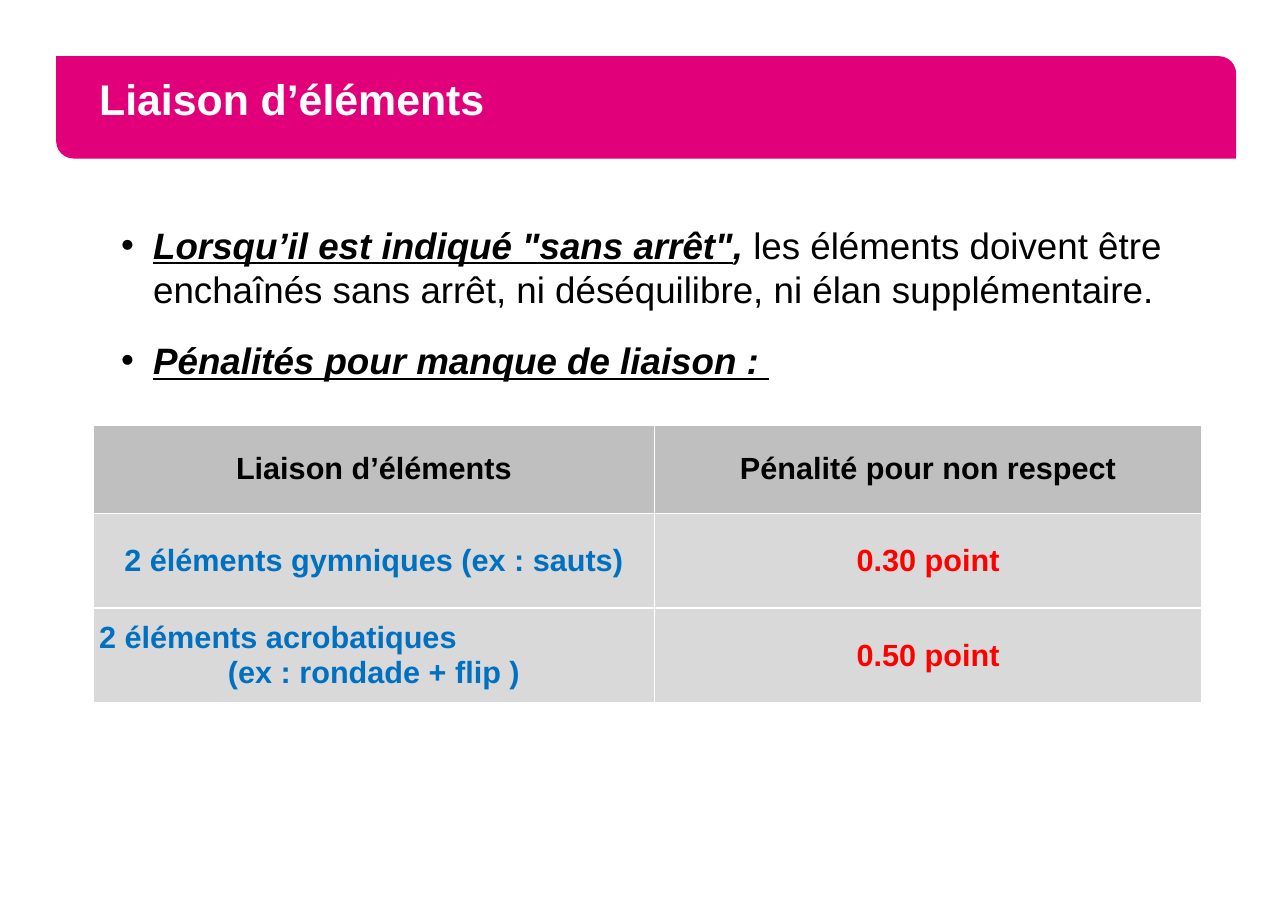
"""Build the slide on linked elements and their penalties."""
import lxml.etree
import pptx
import pptx.dml.color
import pptx.enum.shapes
import pptx.enum.text
import pptx.oxml.ns
import pptx.util

Inches = pptx.util.Inches
Pt = pptx.util.Pt
RGBColor = pptx.dml.color.RGBColor
Align = pptx.enum.text.PP_ALIGN
Anchor = pptx.enum.text.MSO_ANCHOR
AutoSize = pptx.enum.text.MSO_AUTO_SIZE
qn = pptx.oxml.ns.qn

WHITE = RGBColor(0xFF, 0xFF, 0xFF)
BLACK = RGBColor(0, 0, 0)
MAGENTA = RGBColor(0xE2, 0x00, 0x7A)
HEADER_GREY = RGBColor(0xBF, 0xBF, 0xBF)
ROW_GREY = RGBColor(0xD9, 0xD9, 0xD9)
BLUE = RGBColor(0x00, 0x70, 0xC0)
RED = RGBColor(0xFF, 0x00, 0x00)

STRONG = {"bold": True, "italic": True, "underline": True}
TITLE_BOX = (0.51, 0.51, 10.71, 0.93)
RULES = [
    (18, [("Lorsqu’il est indiqué \"sans arrêt\"", STRONG),
          (", ", {**STRONG, "underline": False}),
          ("les éléments doivent être enchaînés sans arrêt, "
           "ni déséquilibre, ni élan supplémentaire.", {})]),
    (6, [("Pénalités pour manque de liaison : ", STRONG)]),
]
CENTER, LEFT = Align.CENTER, Align.LEFT
PENALTIES = [
    ([("Liaison d’éléments", CENTER)], [("Pénalité pour non respect", CENTER)]),
    ([("2 éléments gymniques (ex : sauts)", CENTER)], [("0.30 point", CENTER)]),
    ([("2 éléments acrobatiques", LEFT), ("(ex : rondade + flip )", CENTER)],
     [("0.50 point", CENTER)]),
]


def apply(target, values):
    for name, value in values.items():
        setattr(target, name, value)


def place(shape, box):
    apply(shape, dict(zip(("left", "top", "width", "height"), map(Inches, box))))


class SlideBuilder:
    font_name = "Arial"
    hanging = Inches(0.29)

    def __init__(self, presentation):
        self.slide = presentation.slides.add_slide(presentation.slide_layouts[1])

    def add_run(self, paragraph, text, size, color, values):
        run = paragraph.add_run()
        run.text = text
        apply(run.font, {"name": self.font_name, "size": Pt(size), **values})
        run.font.color.rgb = color

    def banner(self, box):
        shape = self.slide.shapes.add_shape(
            pptx.enum.shapes.MSO_SHAPE.ROUND_2_DIAG_RECTANGLE, *map(Inches, box))
        shape.shadow.inherit = False
        shape.fill.solid()
        shape.fill.fore_color.rgb = MAGENTA
        shape.line.fill.background()
        shape.adjustments[0] = 0
        shape.adjustments[1] = 0.17
        self.slide.shapes.title.element.addprevious(shape.element)

    def title(self, text, box):
        shape = self.slide.shapes.title
        place(shape, box)
        apply(shape.text_frame, {
            "margin_left": Inches(0.39), "margin_right": Inches(0.39),
            "vertical_anchor": Anchor.MIDDLE, "auto_size": AutoSize.NONE})
        paragraph = shape.text_frame.paragraphs[0]
        apply(paragraph, {"alignment": LEFT, "line_spacing": Pt(22)})
        self.add_run(paragraph, text, 28, WHITE, {"bold": True})

    def bullets(self, items, box):
        shape = self.slide.placeholders[1]
        place(shape, box)
        frame = shape.text_frame
        apply(frame, {"word_wrap": True, "auto_size": AutoSize.SHAPE_TO_FIT_TEXT})
        for index, (space_after, runs) in enumerate(items):
            paragraph = frame.add_paragraph() if index else frame.paragraphs[0]
            properties = paragraph._p.get_or_add_pPr()
            properties.set("marL", str(self.hanging))
            properties.set("indent", str(-self.hanging))
            lxml.etree.SubElement(properties, qn("a:buFont"), typeface=self.font_name)
            lxml.etree.SubElement(properties, qn("a:buChar"), char="•")
            apply(paragraph, {"space_before": Pt(0), "space_after": Pt(space_after)})
            for text, values in runs:
                self.add_run(paragraph, text, 24, BLACK, values)

    def cell(self, cell, lines, fill, color):
        properties = cell._tc.get_or_add_tcPr()
        for side in ("a:lnL", "a:lnR", "a:lnT", "a:lnB"):
            line = lxml.etree.SubElement(properties, qn(side), w=str(Pt(1)))
            solid = lxml.etree.SubElement(line, qn("a:solidFill"))
            lxml.etree.SubElement(solid, qn("a:srgbClr"), val=str(WHITE))
        cell.fill.solid()
        cell.fill.fore_color.rgb = fill
        margins = ("margin_left", "margin_right", "margin_top", "margin_bottom")
        apply(cell, dict.fromkeys(margins, Inches(0.05)))
        cell.vertical_anchor = Anchor.MIDDLE
        frame = cell.text_frame
        for index, (text, alignment) in enumerate(lines):
            paragraph = frame.add_paragraph() if index else frame.paragraphs[0]
            paragraph.alignment = alignment
            self.add_run(paragraph, text, 20, color, {"bold": True})

    def table(self, rows, box, widths, heights):
        table = self.slide.shapes.add_table(
            len(rows), len(widths), *map(Inches, box)).table
        for column, width in zip(table.columns, widths):
            column.width = Inches(width)
        for row, height in zip(table.rows, heights):
            row.height = Inches(height)
        for row_index, row in enumerate(rows):
            fill = ROW_GREY if row_index else HEADER_GREY
            for column_index, lines in enumerate(row):
                color = (BLUE, RED)[column_index] if row_index else BLACK
                self.cell(table.cell(row_index, column_index), lines, fill, color)


def main():
    presentation = pptx.Presentation()
    apply(presentation, {"slide_width": Inches(11.69), "slide_height": Inches(8.27)})
    builder = SlideBuilder(presentation)
    builder.banner(TITLE_BOX)
    builder.title("Liaison d’éléments", TITLE_BOX)
    builder.table(PENALTIES, (0.85, 3.86, 10.06, 2.52), (5.09, 4.97), (0.8, 0.86, 0.86))
    builder.bullets(RULES, (1, 1.97, 9.81, 1.57))
    presentation.save("out.pptx")


if __name__ == "__main__":
    main()
